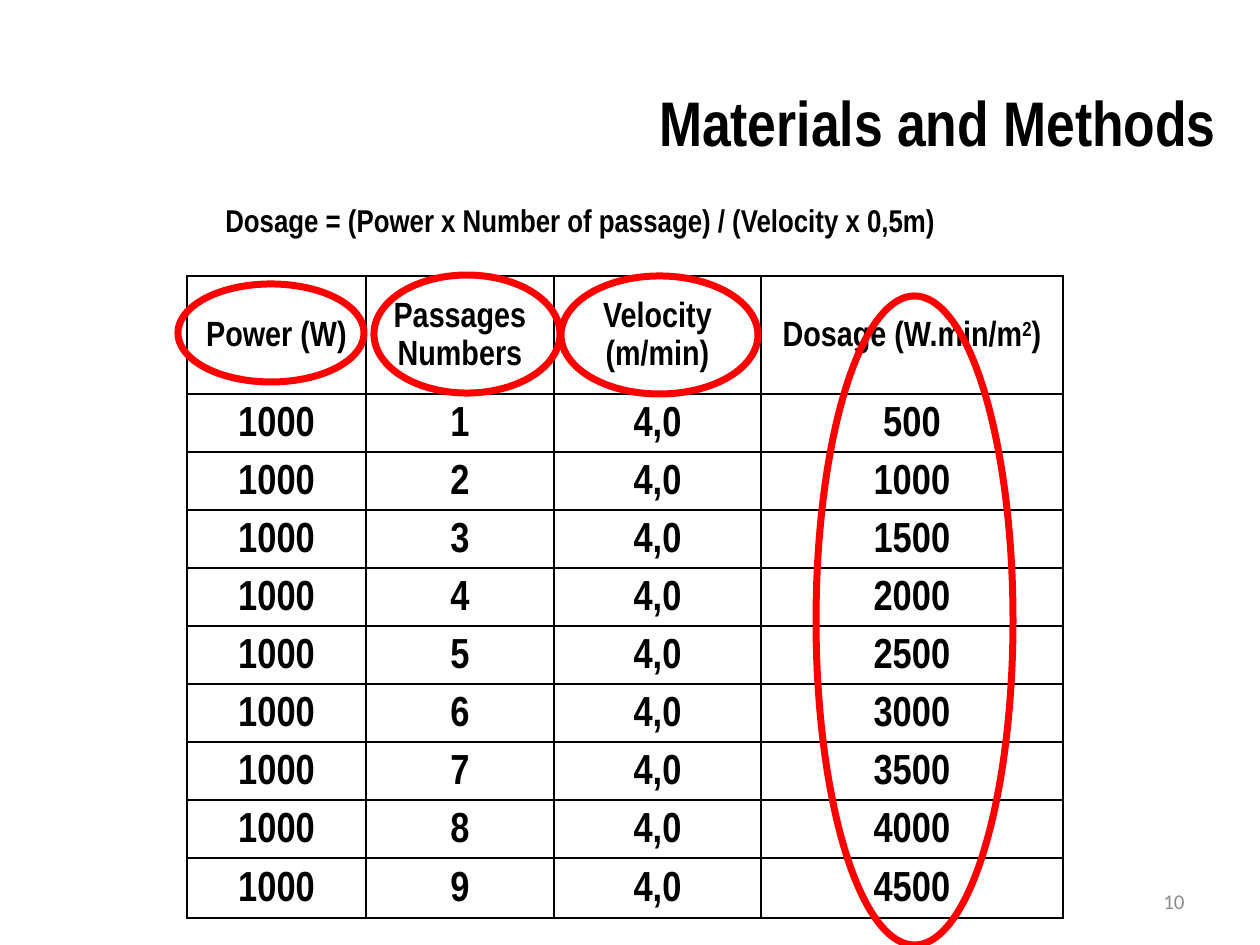
from dataclasses import dataclass

from lxml import etree
from pptx import Presentation
from pptx import util as u
from pptx.dml.color import RGBColor
from pptx.enum import shapes, text
from pptx.oxml import ns


@dataclass(frozen=True)
class Theme:
    """Colours, fonts and type sizes of the slide."""
    ink: str = "000000"
    accent: str = "FF0000"
    muted: str = "8C8C8C"
    face: str = "Arial Narrow"
    number_face: str = "Calibri"
    title: int = 36
    formula: int = 18
    head: int = 20
    body: int = 24
    number: int = 12
    border: int = 1
    ring: int = 4


def px(n):
    """Convert px at 126 to the inch into EMU."""
    return u.Emu(round(n * 914400 / 126))


def apply(obj, values):
    """Set each attribute of obj from a dict."""
    for name, value in values.items():
        setattr(obj, name, value)


class Deck:
    """Draws elements on the current slide in one style."""

    def __init__(self, theme):
        """Start a presentation with a single title-only slide."""
        self.theme = theme
        self.prs = Presentation()
        apply(self.prs, {"slide_width": px(1260), "slide_height": px(945)})
        self.s = self.prs.slides.add_slide(self.prs.slide_layouts[5])

    def fill_text(self, tf, runs, size, align, face=None, color=None, bold=True, **para):
        """Put (text, baseline) runs into the first paragraph."""
        p = tf.paragraphs[0]
        apply(p, {"alignment": align, **para})
        for words, baseline in runs:
            r = p.add_run()
            r.text = words
            apply(r.font, {"size": u.Pt(size), "bold": bold, "name": face or self.theme.face})
            r.font.color.rgb = RGBColor.from_string(color or self.theme.ink)
            if baseline:
                r._r.get_or_add_rPr().set("baseline", str(baseline * 1000))

    def title(self, words, left, top, width, height):
        """Place and format the title placeholder."""
        sp = self.s.shapes.title
        apply(sp, {"left": px(left), "top": px(top), "width": px(width), "height": px(height)})
        apply(sp.text_frame, {"word_wrap": True, "vertical_anchor": text.MSO_ANCHOR.MIDDLE})
        self.fill_text(sp.text_frame, [(words, 0)], self.theme.title, text.PP_ALIGN.CENTER)

    def textbox(self, words, box, size, align=text.PP_ALIGN.LEFT,
                anchor=text.MSO_ANCHOR.TOP, **style):
        """Add a wrapped text box."""
        tf = self.s.shapes.add_textbox(*map(px, box)).text_frame
        apply(tf, {"word_wrap": True, "vertical_anchor": anchor})
        self.fill_text(tf, [(words, 0)], size, align, **style)

    def ring(self, *box):
        """Add an unfilled accent ring."""
        sp = self.s.shapes.add_shape(shapes.MSO_SHAPE.FLOWCHART_CONNECTOR, *map(px, box))
        sp.shadow.inherit = False
        sp.fill.background()
        sp.line.color.rgb = RGBColor.from_string(self.theme.accent)
        sp.line.width = u.Pt(self.theme.ring)

    def borders(self, cell):
        """Draw a thin line on all four sides of a cell."""
        tc_pr = cell._tc.get_or_add_tcPr()
        for side in ("lnL", "lnR", "lnT", "lnB"):
            ln = etree.SubElement(tc_pr, ns.qn(f"a:{side}"), w=str(u.Pt(self.theme.border)))
            fill = etree.SubElement(ln, ns.qn("a:solidFill"))
            etree.SubElement(fill, ns.qn("a:srgbClr"), val=self.theme.ink)

    def table(self, rows, left, top, widths, heights):
        """Add a plain ruled table with a smaller header row."""
        frame = self.s.shapes.add_table(
            len(rows), len(widths), px(left), px(top), px(sum(widths)), px(sum(heights)))
        table = frame.table
        apply(table, {"first_row": False, "horz_banding": False})
        for column, width in zip(table.columns, widths):
            column.width = px(width)
        for i, (row, height) in enumerate(zip(rows, heights)):
            table.rows[i].height = px(height)
            for j, runs in enumerate(row):
                cell = table.cell(i, j)
                apply(cell, {"margin_left": px(9), "margin_right": px(9), "margin_top": 0,
                             "margin_bottom": 0, "vertical_anchor": text.MSO_ANCHOR.MIDDLE})
                self.borders(cell)
                cell.fill.background()
                self.fill_text(cell.text_frame, runs, self.theme.body if i else self.theme.head,
                               text.PP_ALIGN.CENTER, line_spacing=1.15, space_after=u.Pt(10))


def main():
    """Build and save the dosage slide."""
    theme = Theme()
    deck = Deck(theme)
    header = [[("Power (W)", 0)], [("Passages Numbers", 0)], [("Velocity (m/min)", 0)],
              [("Dosage (W.min/m", 0), ("2", 30), (")", 0)]]
    body = [[[(value, 0)] for value in ("1000", str(n), "4,0", str(500 * n))]
            for n in range(1, 10)]
    deck.table([header] + body, 187, 276, [179, 188, 207, 302], [118] + [58] * 8 + [60])
    deck.textbox("Dosage = (Power x Number of passage) / (Velocity x 0,5m)",
                 (213, 195, 896, 50), theme.formula)
    for box in ((178, 284, 186, 98), (374, 275, 186, 118),
                (561, 276, 197, 118), (816, 296, 197, 649)):
        deck.ring(*box)
    deck.textbox("10", (903, 876, 294, 50), theme.number, text.PP_ALIGN.RIGHT,
                 text.MSO_ANCHOR.MIDDLE, face=theme.number_face, color=theme.muted, bold=False)
    deck.title("Materials and Methods", 561, 37, 753, 169)
    deck.prs.save("out.pptx")


if __name__ == "__main__":
    main()
